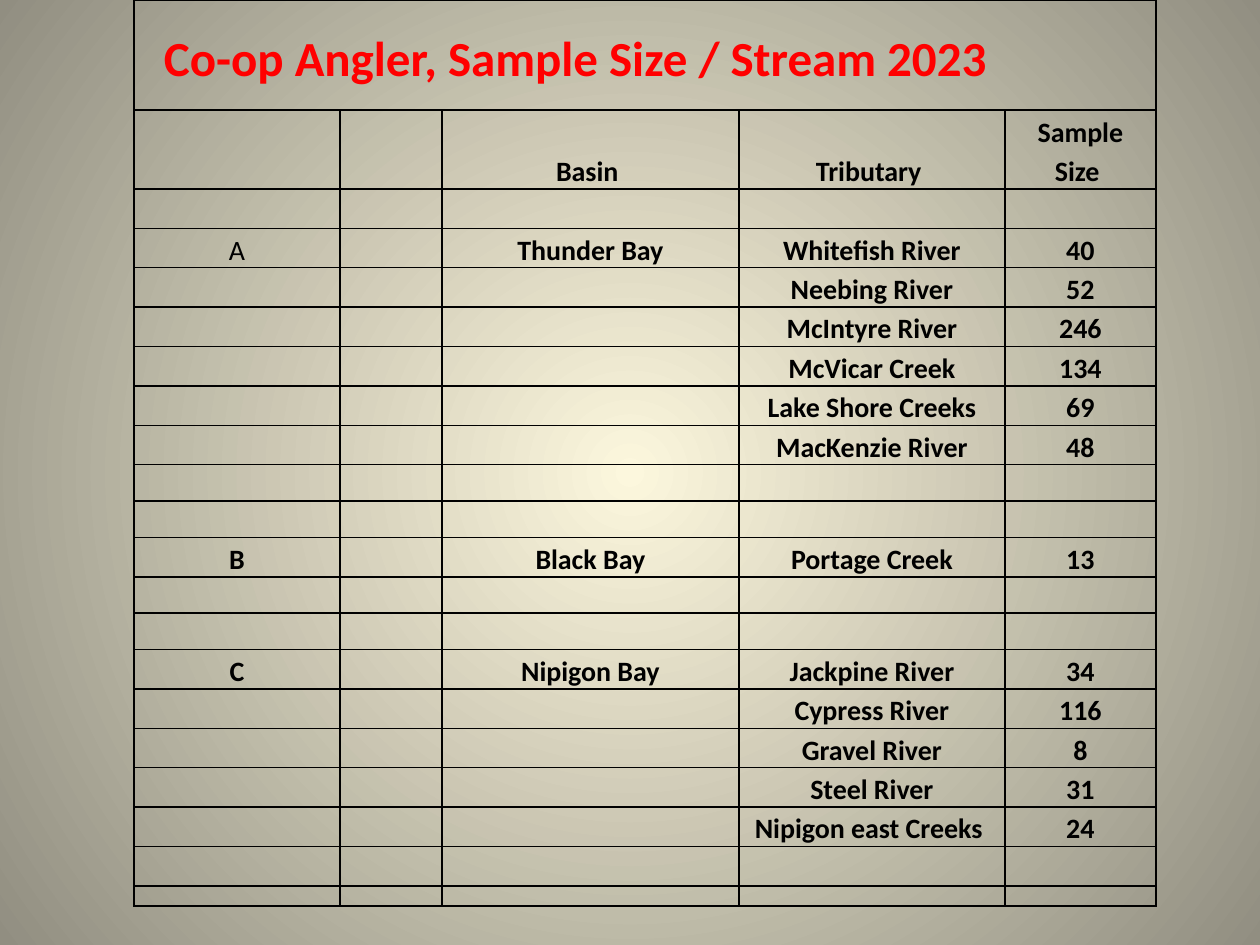
from lxml import etree
from pptx import Presentation
from pptx.dml.color import RGBColor
from pptx.enum.text import MSO_ANCHOR, PP_ALIGN
from pptx.oxml import parse_xml
from pptx.oxml.ns import nsdecls, qn
from pptx.util import Emu, Pt

BOTTOM, CENTER, LEFT = MSO_ANCHOR.BOTTOM, PP_ALIGN.CENTER, PP_ALIGN.LEFT
BLACK, RED = "000000", "FF0000"
GLOW = [(0, "FCF7DD"), (100, "918E81")]

TITLE = "Co-op Angler, Sample Size / Stream 2023"
HEADINGS = ("", "", "Basin ", "Tributary ", "Sample Size ")
BASINS = [
    ("A", "Thunder Bay", 2, [
        ("Whitefish River", 40), ("Neebing River", 52), ("McIntyre River", 246),
        ("McVicar Creek", 134), ("Lake Shore Creeks", 69), ("MacKenzie River", 48)]),
    ("B", "Black Bay", 2, [("Portage Creek", 13)]),
    ("C", "Nipigon Bay", 0, [
        ("Jackpine River", 34), ("Cypress River", 116), ("Gravel River", 8),
        ("Steel River", 31), ("Nipigon east Creeks ", 24)]),
]
TABLE_LEFT, TABLE_TOP = 134, 0
COLUMN_WIDTHS = (206, 102, 297, 266, 151)
TITLE_HEIGHT, SPACER_HEIGHT, HEADING_HEIGHT = 90, 20, 79
STREAM_HEIGHT, GAP_HEIGHT = 39.4, 36.4
CELL_INSET, TITLE_INSET = 8, 30
BLANK = ("",) * 5


def px(length):
    """Turn px into EMU."""
    return Emu(round(length * 914400 / 126))


def rgb(value):
    """Turn a hex string into a colour."""
    return RGBColor.from_string(value)


def paint_background(slide):
    """Give the slide a radial gradient."""
    stops = "".join(f'<a:gs pos="{at * 1000}"><a:srgbClr val="{color}"/></a:gs>'
                    for at, color in GLOW)
    slide.element.cSld.insert(0, parse_xml(
        f'<p:bg {nsdecls("p", "a")}><p:bgPr><a:gradFill rotWithShape="1">'
        f'<a:gsLst>{stops}</a:gsLst><a:path path="circle">'
        '<a:fillToRect l="50000" t="50000" r="50000" b="50000"/></a:path>'
        '</a:gradFill><a:effectLst/></p:bgPr></p:bg>'))


def table_rows():
    """List the height and texts of every row."""
    rows = [(TITLE_HEIGHT, (TITLE, "", "", "", "")), (SPACER_HEIGHT, BLANK),
            (HEADING_HEIGHT, HEADINGS), (STREAM_HEIGHT, BLANK)]
    for letter, basin, gaps, streams in BASINS:
        for index, (stream, size) in enumerate(streams):
            lead = ("", "", "") if index else (letter, "", basin)
            rows.append((STREAM_HEIGHT, (*lead, stream, str(size))))
        rows += [(GAP_HEIGHT, BLANK)] * gaps
    return rows + [(STREAM_HEIGHT, BLANK), (SPACER_HEIGHT, BLANK)]


def visible_sides(row, column):
    """Name the ruled sides of a cell; the title block has only its outline."""
    if row > 1:
        return "LRTB"
    ends = {0: "L", len(COLUMN_WIDTHS) - 1: "R"}
    return ends.get(column, "") + "TB"[row]


def rule_cell(cell, sides):
    """Draw the named sides of a cell and clear the others."""
    properties = cell._tc.get_or_add_tcPr()
    for side in "LRTB":
        line = etree.SubElement(properties, qn(f"a:ln{side}"), w=str(Pt(1)))
        if side in sides:
            ink = etree.SubElement(line, qn("a:solidFill"))
            etree.SubElement(ink, qn("a:srgbClr"), val=BLACK)
        else:
            etree.SubElement(line, qn("a:noFill"))
    cell.fill.background()


def write_cell(cell, text):
    """Write a cell's text in the style of its content."""
    is_title = text == TITLE
    margins = {"margin_left": px(TITLE_INSET if is_title else CELL_INSET),
               "margin_right": px(CELL_INSET), "margin_top": 0, "margin_bottom": 0,
               "vertical_anchor": BOTTOM}
    for name, value in margins.items():
        setattr(cell, name, value)
    paragraph = cell.text_frame.paragraphs[0]
    if not text:
        etree.SubElement(paragraph._p, qn("a:endParaRPr"), sz="800")
        return
    paragraph.alignment = LEFT if is_title else CENTER
    paragraph.line_spacing = 1.15
    run = paragraph.add_run()
    run.text = text
    style = {"name": "Calibri", "size": Pt(28 if is_title else 16), "bold": text != "A"}
    for name, value in style.items():
        setattr(run.font, name, value)
    run.font.color.rgb = rgb(RED if is_title else BLACK)


def main():
    """Build the sample size slide."""
    deck = Presentation()
    deck.slide_width, deck.slide_height = px(1260), px(945)
    slide = deck.slides.add_slide(deck.slide_layouts[6])
    paint_background(slide)

    rows = table_rows()
    table = slide.shapes.add_table(
        len(rows), len(COLUMN_WIDTHS), px(TABLE_LEFT), px(TABLE_TOP),
        px(sum(COLUMN_WIDTHS)), px(sum(height for height, _ in rows))).table
    table.first_row = table.horz_banding = False
    for column, width in zip(table.columns, COLUMN_WIDTHS):
        column.width = px(width)
    for row, (height, texts) in enumerate(rows):
        table.rows[row].height = px(height)
        for column, text in enumerate(texts):
            cell = table.cell(row, column)
            rule_cell(cell, visible_sides(row, column))
            write_cell(cell, text)
    table.cell(0, 0).merge(table.cell(0, 3))
    deck.save("out.pptx")


if __name__ == "__main__":
    main()
